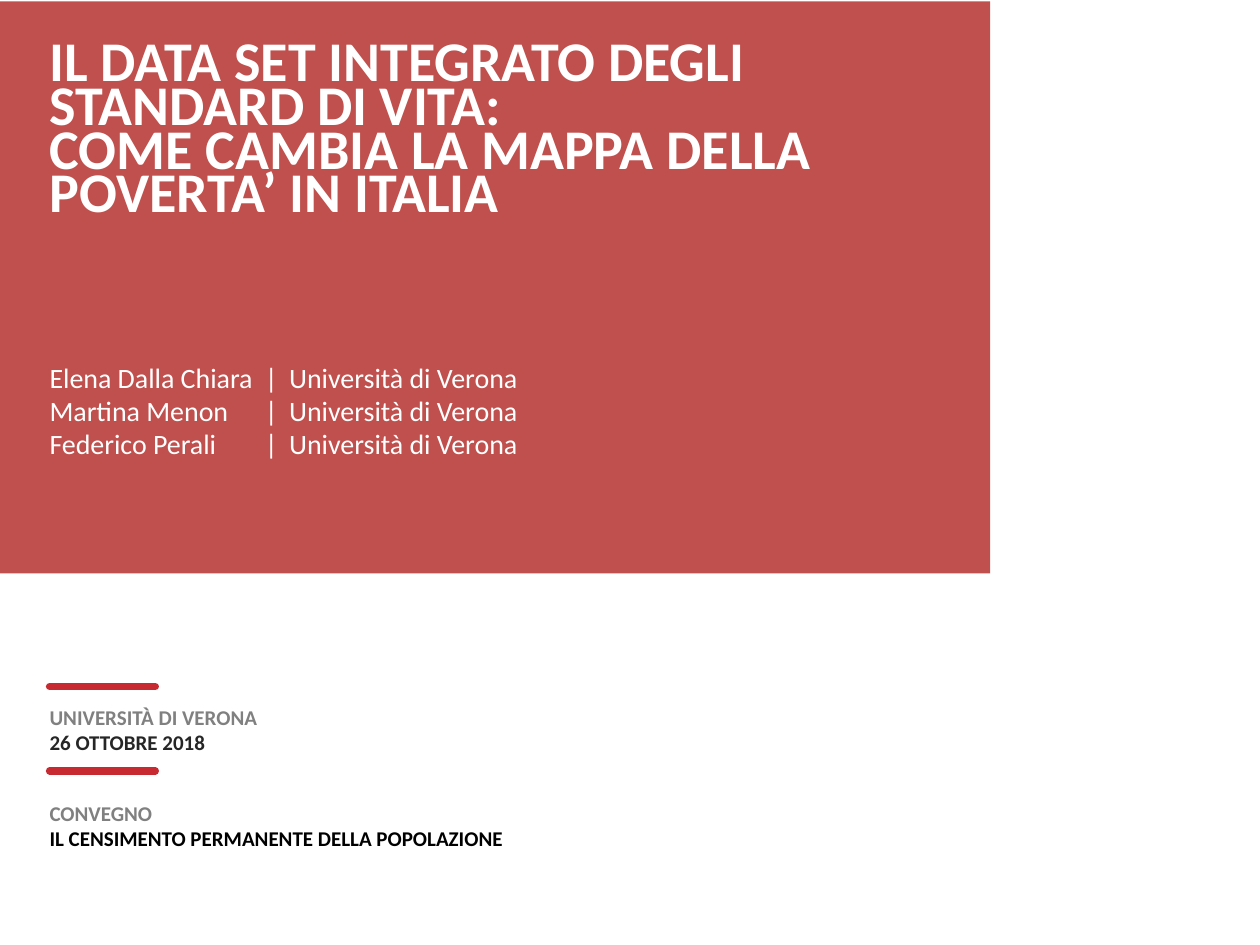
"""Build the title slide of a talk on poverty mapping in Italy."""
from dataclasses import dataclass
from typing import Optional

from lxml import etree
from pptx import Presentation
from pptx import util as u
from pptx.dml.color import RGBColor
from pptx.enum import shapes, text
from pptx.oxml import ns

COLOURS = {
    "panel": "C0504D",
    "rule": "C72A31",
    "white": "FFFFFF",
    "grey": "808080",
    "dark": "262626",
    "black": "000000",
}
FONT = "Calibri"
MARGIN = 1.0
RULE_WIDTH = 2.13
RULE_TOPS = (13.84, 15.54)
AUTHOR_TABS = (4.34, 4.83)
UNIVERSITY = "Università di Verona"
AUTHORS = ("Elena Dalla Chiara", "Martina Menon", "Federico Perali")


@dataclass(frozen=True)
class Line:
    """One paragraph, whose phrases are separated by line breaks."""

    phrases: tuple[str, ...]
    colour: str = "white"


@dataclass(frozen=True)
class Block:
    """A text box at the left margin, measured in centimetres and points."""

    top: float
    width: float
    height: float
    lines: tuple[Line, ...]
    size: float
    bold: bool = True
    leading: Optional[float] = None
    tabs: tuple[float, ...] = ()


BLOCKS = (
    Block(0.99, 16.64, 3.63, (
        Line((
            "IL DATA SET INTEGRATO DEGLI STANDARD DI VITA:",
            "COME CAMBIA LA MAPPA DELLA POVERTA’ IN ITALIA",
        )),
    ), 32, leading=25),
    Block(
        7.29, 11.1, 2.72,
        tuple(Line((f"{author}\t|\t{UNIVERSITY}",)) for author in AUTHORS),
        16, bold=False, leading=18.8, tabs=AUTHOR_TABS,
    ),
    Block(14.2, 9.4, 1.02, (
        Line(("UNIVERSITÀ DI VERONA",), "grey"),
        Line(("26 OTTOBRE 2018",), "dark"),
    ), 12),
    Block(16.13, 14.02, 1.02, (
        Line(("CONVEGNO",), "grey"),
        Line(("IL CENSIMENTO PERMANENTE DELLA POPOLAZIONE",), "black"),
    ), 12),
)


def colour(name: str) -> RGBColor:
    """Look up a named colour."""
    return RGBColor.from_string(COLOURS[name])


def draw_panel(page) -> None:
    """Draw the coloured panel behind the title."""
    panel = page.shapes.add_shape(
        shapes.MSO_SHAPE.RECTANGLE, u.Cm(0), u.Cm(0.03), u.Cm(19.96), u.Cm(11.53)
    )
    panel.shadow.inherit = False
    panel.fill.solid()
    panel.fill.fore_color.rgb = colour("panel")
    panel.line.fill.background()


def draw_rule(page, top: float) -> None:
    """Draw a short rule with round ends."""
    rule = page.shapes.add_connector(
        shapes.MSO_CONNECTOR.STRAIGHT,
        u.Cm(MARGIN), u.Cm(top), u.Cm(MARGIN + RULE_WIDTH), u.Cm(top),
    )
    rule.line.color.rgb = colour("rule")
    rule.line.width = u.Pt(4.25)
    properties = rule._element.spPr
    properties.find(ns.qn("a:ln")).set("cap", "rnd")
    etree.SubElement(properties, ns.qn("a:effectLst"))


def add_tabs(para, positions: tuple[float, ...]) -> None:
    """Give a paragraph left tab stops."""
    tab_list = etree.SubElement(para._p.get_or_add_pPr(), ns.qn("a:tabLst"))
    for position in positions:
        etree.SubElement(
            tab_list, ns.qn("a:tab"), pos=str(int(u.Cm(position))), algn="l"
        )


def write_line(para, line: Line, block: Block) -> None:
    """Write the phrases of a line as runs."""
    if block.tabs:
        add_tabs(para, block.tabs)
    if block.leading:
        para.line_spacing = u.Pt(block.leading)
    for index, phrase in enumerate(line.phrases):
        if index:
            para.add_line_break()
        span = para.add_run()
        span.text = phrase
        span.font.name = FONT
        span.font.size = u.Pt(block.size)
        span.font.bold = block.bold
        span.font.color.rgb = colour(line.colour)


def draw_block(page, block: Block) -> None:
    """Draw a text box without insets."""
    box = page.shapes.add_textbox(
        u.Cm(MARGIN), u.Cm(block.top), u.Cm(block.width), u.Cm(block.height)
    )
    frame = box.text_frame
    frame.word_wrap = True
    frame.vertical_anchor = text.MSO_ANCHOR.TOP
    frame.margin_left = frame.margin_right = u.Cm(0)
    frame.margin_top = frame.margin_bottom = u.Cm(0)
    for index, line in enumerate(block.lines):
        para = frame.add_paragraph() if index else frame.paragraphs[0]
        write_line(para, line, block)


def main() -> None:
    """Build and save the deck."""
    deck = Presentation()
    deck.slide_width, deck.slide_height = u.Cm(25.4), u.Cm(19.05)
    page = deck.slides.add_slide(deck.slide_layouts[6])
    draw_panel(page)
    for top in RULE_TOPS:
        draw_rule(page, top)
    for block in BLOCKS:
        draw_block(page, block)
    deck.save("out.pptx")


if __name__ == "__main__":
    main()
